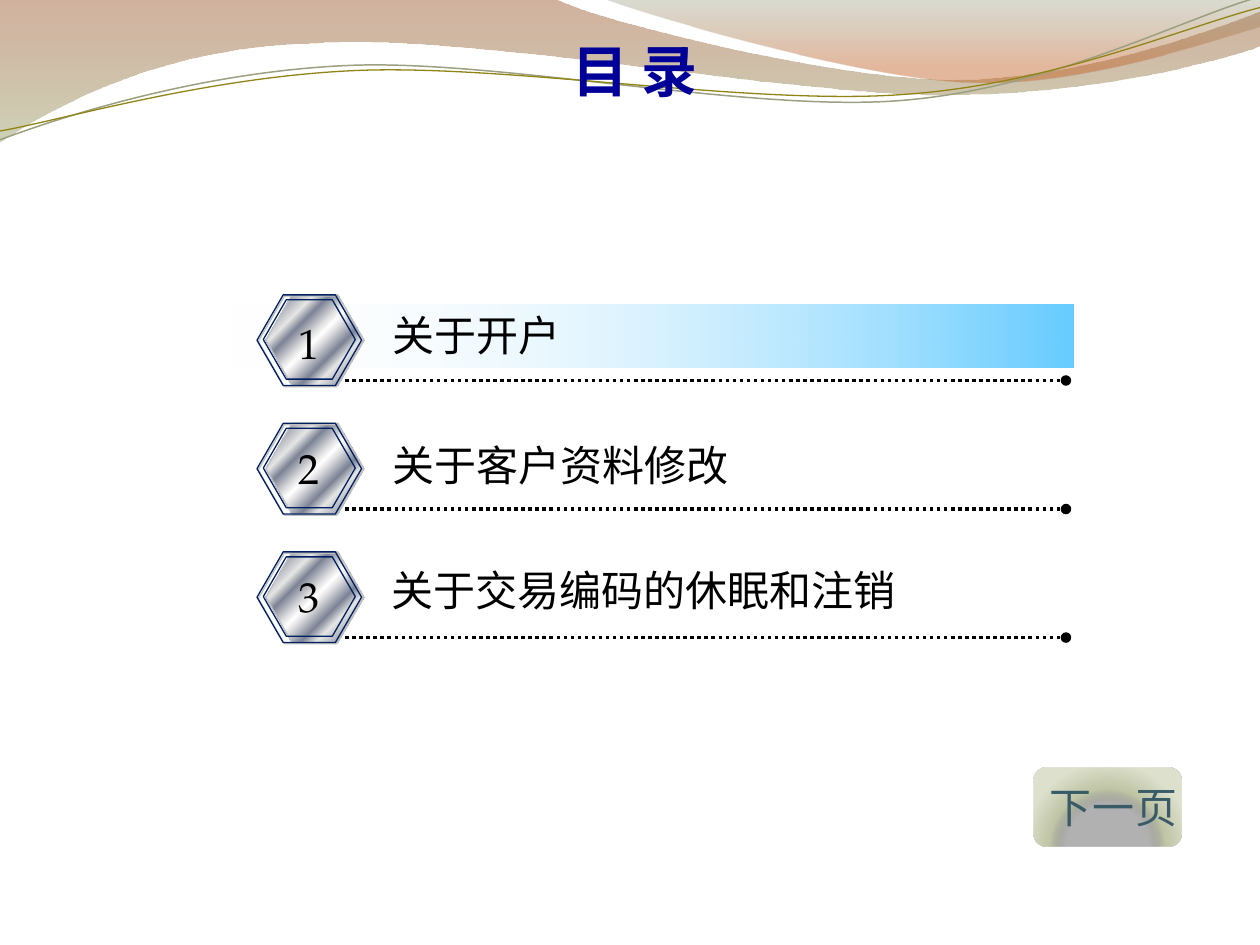
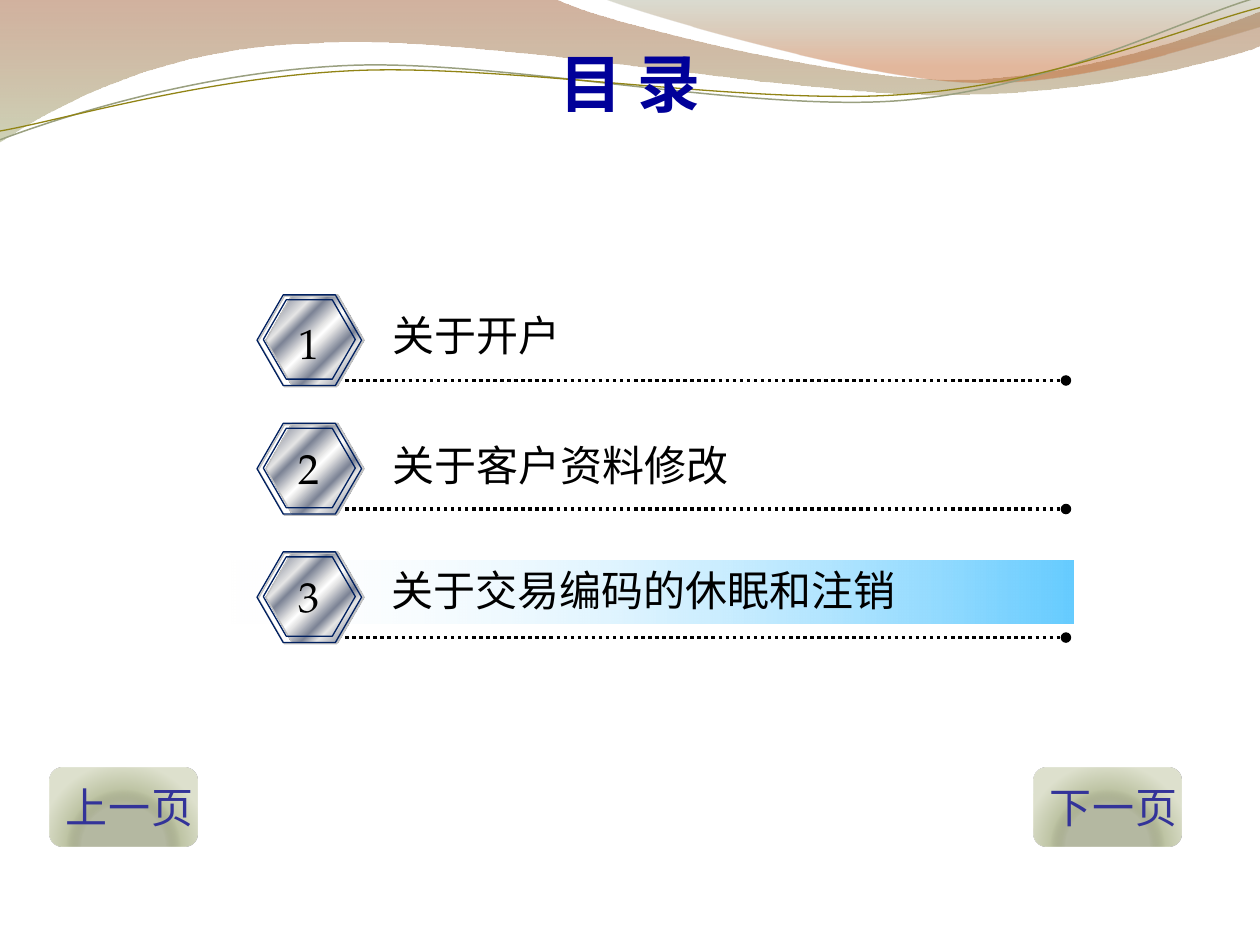
from pptx import Presentation
from pptx.dml.color import RGBColor
from pptx.enum.dml import MSO_LINE
from pptx.enum.lang import MSO_LANGUAGE_ID
from pptx.enum.shapes import MSO_CONNECTOR, MSO_SHAPE
from pptx.enum.text import MSO_ANCHOR, PP_ALIGN
from pptx.oxml import parse_xml
from pptx.oxml.ns import nsdecls, qn
from pptx.util import Inches, Pt

SERIF, SANS = "TeX Gyre Pagella", "Noto Sans CJK JP"
BLACK, NAVY, SILVER, TITLE = "000000", "002060", "C0C0C0", "000099"
METAL = [(0, "E6E6E6"), (8, "7D8496"), (26, "E6E6E6"), (34, "7D8496"),
         (46, "E6E6E6"), (50, "FFFFFF"), (54, "E6E6E6"), (66, "7D8496"),
         (74, "E6E6E6"), (92, "7D8496"), (100, "E6E6E6")]
GLOW = [(0, "FFFFFF", 0), (100, "66CCFF")]
ROW_TOP, ROW_STEP = 2.34, 1.02

# Each item: text, left and top of its label, top of its number
ITEMS = [("关于开户", 3.02, 2.41, 2.47),
         ("关于客户资料修改", 3.02, 3.44, 3.46),
         ("关于交易编码的休眠和注销", 3.01, 4.43, 4.48)]

# Each wave: a start point, then cubic curves (six numbers) and lines (two)
BANDS = [
    ([(0, 0), (4.4, -0.01), (4.76, 0.17, 6.64, 0.63, 7.58, 0.63),
      (8.53, 0.63, 9.58, 0.26, 10, 0.09), (10.01, 0.36),
      (9.83, 0.44, 8.7, 0.76, 7.46, 0.75),
      (6.22, 0.75, 3.82, 0.28, 2.57, 0.34),
      (1.29, 0.36, 0.46, 0.83, -0.01, 1.13)],
     [(0, "9A542A", 45), (100, "A5AD7B", 55)]),
    ([(4.79, -0.01), (5.09, 0.11, 6.82, 0.62, 7.69, 0.65),
      (8.56, 0.69, 9.61, 0.32, 10, 0.21), (10, 0)],
     [(0, "848A67", 30), (80, "C36228", 45)]),
]
STRANDS = [
    ([(0, 1.11), (0.48, 0.93, 1.58, 0.57, 2.77, 0.52),
      (3.95, 0.47, 5.93, 0.89, 7.13, 0.8),
      (8.33, 0.71, 9.38, 0.15, 9.98, -0.02)], "9AA080", 0.85),
    ([(0, 1.04), (0.47, 0.96, 1.64, 0.61, 2.83, 0.56),
      (4.03, 0.51, 5.97, 0.84, 7.17, 0.75),
      (8.36, 0.67, 9.41, 0.21, 10, 0.06)], "918415", 0.75),
]


def rgb(code):
    return RGBColor.from_string(code)


def box(*lengths):
    return [Inches(n) for n in lengths]


def blend(shape, stops, angle=0, round_fill=False):
    """Fill with a gradient; a stop is percent, colour and optional opacity."""
    marks = ""
    for pos, code, *alpha in stops:
        veil = f'<a:alpha val="{alpha[0] * 1000}"/>' if alpha else ""
        marks += (f'<a:gs pos="{pos * 1000}"><a:srgbClr val="{code}">'
                  f'{veil}</a:srgbClr></a:gs>')
    if round_fill:
        form = ('<a:path path="circle"><a:fillToRect l="50000" t="100000" '
                'r="50000" b="0"/></a:path>')
    else:
        form = f'<a:lin ang="{angle * 60000}" scaled="0"/>'
    shape.fill.gradient()
    old = shape.element.spPr.find(qn("a:gradFill"))
    new = parse_xml(f'<a:gradFill {nsdecls("a")} rotWithShape="1">'
                    f'<a:gsLst>{marks}</a:gsLst>{form}</a:gradFill>')
    old.getparent().replace(old, new)


def style(shape, stops=None, angle=0, line=None, weight=0.75,
          round_fill=False):
    shape.shadow.inherit = False
    if stops:
        blend(shape, stops, angle, round_fill)
    else:
        shape.fill.background()
    if line:
        shape.line.color.rgb = rgb(line)
        shape.line.width = Pt(weight)
    else:
        shape.line.fill.background()
    return shape


def write(frame, text, size=24, font=SERIF, color=BLACK, bold=False,
          align=PP_ALIGN.LEFT, anchor=MSO_ANCHOR.TOP, wrap=True, gap=0):
    frame.word_wrap = wrap
    frame.vertical_anchor = anchor
    para = frame.paragraphs[0]
    para.alignment = align
    run = para.add_run()
    run.text = text
    face = run.font
    face.size, face.name, face.bold = Pt(size), font, bold
    face.color.rgb = rgb(color)
    face.language_id = MSO_LANGUAGE_ID.SIMPLIFIED_CHINESE
    props = run.font._element
    props.find(qn("a:latin")).addnext(
        parse_xml(f'<a:ea {nsdecls("a")} typeface="{SANS}"/>'))
    if gap:
        props.set("spc", str(int(gap * 100)))


def label(slide, text, *area):
    write(slide.shapes.add_textbox(*box(*area)).text_frame, text)


def wave(slide, steps, close):
    """Draw straight sides between the ends, then bend those with handles."""
    ends = [box(*step[-2:]) for step in steps]
    pen = slide.shapes.build_freeform(*ends[0])
    pen.add_line_segments(ends[1:], close=close)
    shape = pen.convert_to_shape()
    sides = list(shape.element.iter(qn("a:lnTo")))
    for side, step in zip(sides, steps[1:]):
        if len(step) == 6:
            spots = box(*step)
            dots = "".join(
                f'<a:pt x="{x - shape.left}" y="{y - shape.top}"/>'
                for x, y in zip(spots[::2], spots[1::2]))
            side.getparent().replace(side, parse_xml(
                f'<a:cubicBezTo {nsdecls("a")}>{dots}</a:cubicBezTo>'))
    return shape


def add_waves(slide):
    """Draw the top waves and hand them to the layout, shared by all slides."""
    waves = [style(wave(slide, steps, True), stops, 90)
             for steps, stops in BANDS]
    waves += [style(wave(slide, steps, False), line=code, weight=weight)
              for steps, code, weight in STRANDS]
    for shape in waves:
        slide.slide_layout.shapes.element.append(shape.element)


def hexagon(shapes, *area, **look):
    shape = shapes.add_shape(MSO_SHAPE.HEXAGON, *box(*area))
    shape.adjustments[0] = 0.289
    return style(shape, **look)


def add_rings(slide, top):
    rings = slide.shapes.add_group_shape().shapes
    hexagon(rings, 2.05, top + 0.01, 0.83, 0.72, line=SILVER)
    hexagon(rings, 2.04, top, 0.83, 0.72, line=NAVY)
    hexagon(rings, 2.09, top + 0.04, 0.73, 0.63, line=NAVY)


def add_rule(slide, top):
    rule = slide.shapes.add_connector(
        MSO_CONNECTOR.STRAIGHT, *box(2.74, top, 8.46, top))
    rule.line.color.rgb = rgb(BLACK)
    rule.line.width = Pt(2)
    rule.line.dash_style = MSO_LINE.ROUND_DOT
    props = rule.element.spPr
    props.find(qn("a:ln")).append(
        parse_xml(f'<a:tailEnd {nsdecls("a")} type="oval"/>'))
    props.append(parse_xml(f'<a:effectLst {nsdecls("a")}/>'))


def add_button(slide, text, left, core, ink):
    shape = slide.shapes.add_shape(MSO_SHAPE.ROUNDED_RECTANGLE,
                                   *box(left, 6.09, 1.18, 0.63))
    stops = [(50, core, 50), (68, "BEC4A4"), (100, "DEE1CE")]
    style(shape, stops, round_fill=True)
    write(shape.text_frame, text, color=ink, anchor=MSO_ANCHOR.MIDDLE,
          wrap=False, gap=0.5)


def add_title(slide, area, size, anchor):
    title = slide.shapes.title
    title.left, title.top, title.width, title.height = box(*area)
    write(title.text_frame, "目 录", size=size, font=SANS, color=TITLE,
          bold=True, align=PP_ALIGN.CENTER, anchor=anchor)


def add_menu(slide, bar_top):
    """List the items, with a glowing bar behind the current one."""
    bar = slide.shapes.add_shape(MSO_SHAPE.RECTANGLE,
                                 *box(1.8, bar_top, 6.72, 0.5))
    style(bar, GLOW)
    for row, (text, left, top, num_top) in enumerate(ITEMS):
        edge = ROW_TOP + ROW_STEP * row
        hexagon(slide.shapes, 2.11, edge, 0.78, 0.72, stops=METAL, angle=45,
                line=SILVER)
        add_rule(slide, edge + 0.68)
        label(slide, text, left, top, 4.24, 0.51)
        add_rings(slide, edge)
        label(slide, str(row + 1), 2.27, num_top, 0.39, 0.51)


def main():
    deck = Presentation()
    deck.slide_width, deck.slide_height = box(10, 7.5)
    layout = deck.slide_layouts[5]

    first = deck.slides.add_slide(layout)
    add_waves(first)
    add_title(first, (0.59, 0.25, 8.9, 0.62), 32, MSO_ANCHOR.MIDDLE)
    add_menu(first, 2.42)
    add_button(first, "下一页", 8.2, "636363", "395B68")

    last = deck.slides.add_slide(layout)
    add_title(last, (0.5, 0.3, 9, 1.25), 36, MSO_ANCHOR.TOP)
    add_menu(last, 4.45)
    for text, left in (("上一页", 0.39), ("下一页", 8.2)):
        add_button(last, text, left, "6A7243", "333399")

    deck.save("out.pptx")


if __name__ == "__main__":
    main()
